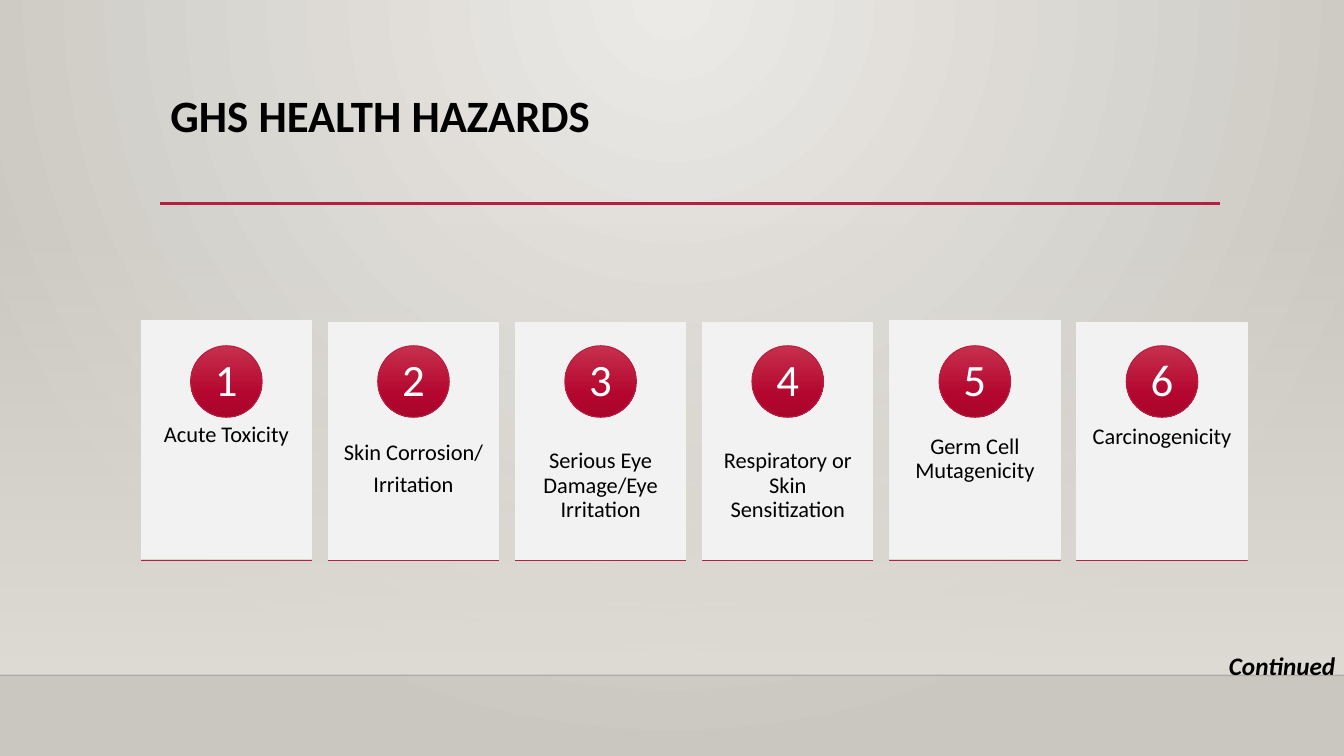
from dataclasses import dataclass

import lxml.etree
import pptx
import pptx.dml.color
import pptx.enum.shapes
import pptx.enum.text
import pptx.oxml
import pptx.oxml.ns
import pptx.util

Inches, Pt = pptx.util.Inches, pptx.util.Pt
SHAPE = pptx.enum.shapes.MSO_SHAPE
ANCHOR = pptx.enum.text.MSO_ANCHOR
ALIGN = pptx.enum.text.PP_ALIGN
qn = pptx.oxml.ns.qn

FONT = "Calibri"
COLORS = {
    "text": "000000", "white": "FFFFFF", "card": "F2F2F2", "accent": "B71E42",
    "floor": "DFDBD5", "edge": "000001", "bg_light": "ECEAE7", "bg_dark": "CAC7C1",
    "red_light": "C7304C", "red": "B3062F", "red_dark": "AA062C",
}
LINEAR = '<a:lin ang="5400000" scaled="0"/>'
CIRCLE = ('<a:path path="circle"><a:fillToRect l="43000" t="0" r="43000" '
          'b="100000"/></a:path>')


@dataclass
class Stop:
    position: int
    color: str
    opacity: int = 100


@dataclass
class Card:
    lines: list[str]
    top: float = 3.2


RED_STOPS = [Stop(0, "red_light"), Stop(69, "red"), Stop(100, "red_dark")]
CARDS = [
    Card(["Acute Toxicity"], top=3.18),
    Card(["Skin Corrosion/", "Irritation"]),
    Card(["Serious Eye Damage/Eye Irritation"]),
    Card(["Respiratory or Skin Sensitization"]),
    Card(["Germ Cell Mutagenicity"], top=3.18),
    Card(["Carcinogenicity"]),
]
CARD_LEFT, CARD_WIDTH, CARD_HEIGHT = 1.4, 1.69, 2.36
CARD_PITCH = (10.68 - CARD_LEFT) / (len(CARDS) - 1)
DISC, NUMBER_BOX = 0.71, 0.5


def rgb(name: str) -> pptx.dml.color.RGBColor:
    return pptx.dml.color.RGBColor.from_string(COLORS[name])


def set_gradient(owner, stops: list[Stop], direction: str) -> None:
    """Fill a shape or slide background with a gradient."""
    owner.fill.solid()
    owner.fill.fore_color.rgb = rgb(stops[0].color)
    gs = "".join(
        f'<a:gs pos="{st.position * 1000}"><a:srgbClr val="{COLORS[st.color]}">'
        f'<a:alpha val="{st.opacity * 1000}"/></a:srgbClr></a:gs>' for st in stops)
    grad = pptx.oxml.parse_xml(
        f'<a:gradFill {pptx.oxml.ns.nsdecls("a")} rotWithShape="1">'
        f'<a:gsLst>{gs}</a:gsLst>{direction}</a:gradFill>')
    solid = next(owner._element.iter(qn("a:solidFill")))
    solid.getparent().replace(solid, grad)


def add_box(s, kind, left: float, top: float, width: float, height: float,
            fill: str | list[Stop], line: str | None = None):
    sp = s.shapes.add_shape(kind, Inches(left), Inches(top), Inches(width), Inches(height))
    sp.shadow.inherit = False
    if isinstance(fill, str):
        sp.fill.solid()
        sp.fill.fore_color.rgb = rgb(fill)
    else:
        set_gradient(sp, fill, LINEAR)
    if line:
        sp.line.color.rgb = rgb(line)
        sp.line.width = Pt(0.75)
    else:
        sp.line.fill.background()
    return sp


def add_rule(s, left: float, right: float, y: float, color: str, width: float,
             opacity: int = 100) -> None:
    ln = s.shapes.add_connector(pptx.enum.shapes.MSO_CONNECTOR.STRAIGHT,
                                Inches(left), Inches(y), Inches(right), Inches(y))
    ln.line.color.rgb = rgb(color)
    ln.line.width = Pt(width)
    clr = next(ln._element.iter(qn("a:srgbClr")))
    lxml.etree.SubElement(clr, qn("a:alpha")).set("val", str(opacity * 1000))
    lxml.etree.SubElement(ln._element.spPr, qn("a:effectLst"))


def set_font(p, size: float, color: str, bold: bool = False, italic: bool = False) -> None:
    p.font.name, p.font.size = FONT, Pt(size)
    p.font.bold, p.font.italic = bold, italic
    p.font.color.rgb = rgb(color)


def add_centred_text(s, left: float, top: float, width: float, height: float,
                     lines: list[str], size: float, color: str,
                     insets: tuple[float, float], anchor) -> None:
    """Add a text box; insets are horizontal, then vertical."""
    tf = s.shapes.add_textbox(Inches(left), Inches(top), Inches(width),
                              Inches(height)).text_frame
    tf.word_wrap = True
    tf.vertical_anchor = anchor
    tf.margin_left = tf.margin_right = Inches(insets[0])
    tf.margin_top = tf.margin_bottom = Inches(insets[1])
    tf.text = "\n".join(lines)
    for p in tf.paragraphs:
        p.alignment = ALIGN.CENTER
        p.line_spacing = 0.9
        p.space_after = Pt(size * 0.35)
        set_font(p, size, color)


def add_card(s, index: int, card: Card) -> None:
    left = CARD_LEFT + index * CARD_PITCH
    middle = left + CARD_WIDTH / 2
    add_box(s, SHAPE.RECTANGLE, left, card.top, CARD_WIDTH, CARD_HEIGHT, "card", "card")
    add_centred_text(s, left, card.top + 0.9, CARD_WIDTH, 1.42, card.lines, 16, "text",
                     (0.13, 0.36), ANCHOR.TOP)
    add_box(s, SHAPE.OVAL, middle - DISC / 2, 3.43, DISC, DISC, RED_STOPS, "accent")
    add_centred_text(s, middle - NUMBER_BOX / 2, 3.54, NUMBER_BOX, NUMBER_BOX,
                     [str(index + 1)], 32, "white", (0.06, 0.01), ANCHOR.MIDDLE)
    add_box(s, SHAPE.RECTANGLE, left, 5.56, CARD_WIDTH, 0, RED_STOPS, "accent")


def add_title(s, text: str) -> None:
    title = s.shapes.title
    title.left, title.top = Inches(1.59), Inches(0.88)
    title.width, title.height = Inches(10.5), Inches(1.15)
    tf = title.text_frame
    tf.text = text
    tf.vertical_anchor = ANCHOR.TOP
    p = tf.paragraphs[0]
    p.alignment = ALIGN.LEFT
    p.line_spacing = 0.9
    set_font(p, 32, "text", bold=True)


def add_continued(s) -> None:
    tf = s.shapes.add_textbox(Inches(12.09), Inches(6.4), Inches(1.35),
                              Inches(0.4)).text_frame
    tf.word_wrap = False
    tf.auto_size = pptx.enum.text.MSO_AUTO_SIZE.SHAPE_TO_FIT_TEXT
    tf.text = "Continued"
    set_font(tf.paragraphs[0], 18, "text", bold=True, italic=True)


def main() -> None:
    prs = pptx.Presentation()
    prs.slide_width, prs.slide_height = Inches(13.33), Inches(7.5)
    s = prs.slides.add_slide(prs.slide_layouts[5])
    set_gradient(s.background, [Stop(0, "bg_light"), Stop(100, "bg_dark")], CIRCLE)
    add_box(s, SHAPE.RECTANGLE, 0, 2.21, 13.33, 4.49,
            [Stop(0, "floor", 0), Stop(100, "floor")])
    add_rule(s, 0, 13.33, 6.7, "edge", 1, opacity=20)
    add_rule(s, 1.59, 12.1, 2.02, "accent", 2.5)
    add_title(s, "GHS HEALTH HAZARDS")
    for index, card in enumerate(CARDS):
        add_card(s, index, card)
    add_continued(s)
    prs.save("out.pptx")


if __name__ == "__main__":
    main()
